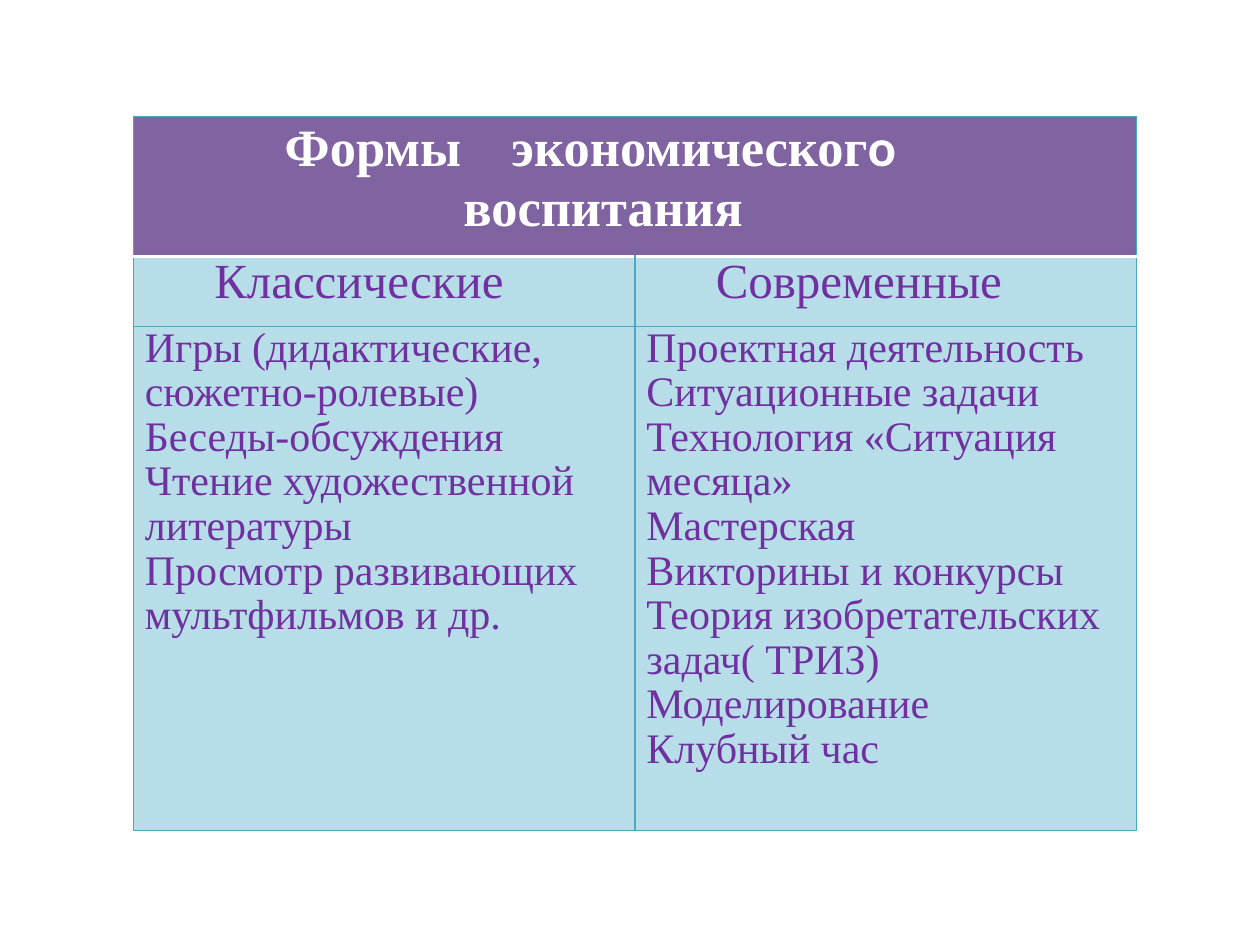
from lxml import etree
from pptx import Presentation
from pptx import util as u
from pptx.dml.color import RGBColor
from pptx.oxml.ns import qn

SERIF = "Times New Roman"
PURPLE, HEADER_FILL, BODY_FILL = "7030A0", "8064A2", "B7DEE8"
BORDER, WHITE = "46AAC5", "FFFFFF"

HEADINGS = ["Классические", "Современные"]
FORMS = [
    ["Игры (дидактические, сюжетно-ролевые)",
     "Беседы-обсуждения",
     "Чтение художественной литературы",
     "Просмотр\tразвивающих мультфильмов и др."],
    ["Проектная деятельность",
     "Ситуационные задачи",
     "Технология «Ситуация",
     "месяца»",
     "Мастерская",
     "Викторины и конкурсы",
     "Теория изобретательских",
     "задач( ТРИЗ)",
     "Моделирование",
     "Клубный час"],
]


def color(hex_string):
    return RGBColor.from_string(hex_string)


def style_paragraph(paragraph, size, hex_color, bold=False, left=0, first=0,
                    tab=None, spacing=None):
    font = paragraph.font
    font.name, font.size, font.bold = SERIF, u.Pt(size), bold
    font.color.rgb = color(hex_color)
    if spacing:
        paragraph.line_spacing = spacing
    # Indents and tab stop
    properties = paragraph._p.get_or_add_pPr()
    properties.set("marL", str(u.Cm(left)))
    properties.set("indent", str(u.Cm(first)))
    if tab:
        tab_list = etree.Element(qn("a:tabLst"))
        etree.SubElement(tab_list, qn("a:tab"), pos=str(u.Cm(tab)), algn="l")
        properties.find(qn("a:defRPr")).addprevious(tab_list)


def set_border(cell, side, hex_color, width):
    properties = cell._tc.get_or_add_tcPr()
    line = etree.Element(qn(f"a:ln{side}"), w=str(u.Pt(width)))
    fill = etree.SubElement(line, qn("a:solidFill"))
    etree.SubElement(fill, qn("a:srgbClr"), val=hex_color)
    # Border lines stand before the fill, in the order left, right, top, bottom
    properties.find(qn("a:solidFill")).addprevious(line)


def format_cell(cell, fill, top=(BORDER, 0.75), bottom=(BORDER, 0.75)):
    cell.margin_left = cell.margin_right = 0
    cell.margin_top = cell.margin_bottom = 0
    cell.fill.solid()
    cell.fill.fore_color.rgb = color(fill)
    edge = (BORDER, 0.75)
    for side, border in zip("LRTB", (edge, edge, top, bottom)):
        set_border(cell, side, *border)


def fill_cell(cell, lines, size, left, tab=None):
    frame = cell.text_frame
    for index, line in enumerate(lines):
        paragraph = frame.paragraphs[0] if index == 0 else frame.add_paragraph()
        paragraph.add_run().text = line
        style_paragraph(paragraph, size, PURPLE, left=left, spacing=0.96,
                        tab=tab if "\t" in line else None)


def fill_title(cell):
    first = cell.text_frame.paragraphs[0]
    first.add_run().text = "Формы\tэкономическог"
    ending = first.add_run()
    ending.text = "о"
    ending.font.name = "Calibri"
    style_paragraph(first, 30, WHITE, bold=True, first=3.05, tab=7.98)
    second = cell.text_frame.add_paragraph()
    second.add_run().text = "воспитания"
    style_paragraph(second, 30, WHITE, bold=True, left=6.65)


def add_forms_table(slide):
    frame = slide.shapes.add_table(3, 2, u.Cm(2.69), u.Cm(2.34),
                                   u.Cm(20.22), u.Cm(14.4))
    table = frame.table
    table.first_row = table.horz_banding = False
    # Plain table style, without borders or bands
    style_id = table._tbl.tblPr.find(qn("a:tableStyleId"))
    style_id.text = "{2D5ABB26-0587-4C30-8999-92F81FD0307C}"
    for row, height in zip(table.rows, (2.84, 1.4, 10.16)):
        row.height = u.Cm(height)

    # Title row across both columns
    divider = (WHITE, 2)
    title = table.cell(0, 0)
    title.merge(table.cell(0, 1))
    for column in range(2):
        format_cell(table.cell(0, column), HEADER_FILL, bottom=divider)
    fill_title(title)

    # Headings and lists
    for column, (heading, forms) in enumerate(zip(HEADINGS, FORMS)):
        heading_cell, list_cell = table.cell(1, column), table.cell(2, column)
        format_cell(heading_cell, BODY_FILL, top=divider)
        fill_cell(heading_cell, [heading], 28, left=1.63)
        format_cell(list_cell, BODY_FILL)
        fill_cell(list_cell, forms, 24, left=0.23, tab=4.72)
    # Keeps the last words of the left list on their own lines
    table.cell(2, 0).margin_right = u.Cm(0.9)


def main():
    presentation = Presentation()
    presentation.slide_width, presentation.slide_height = u.Cm(25.4), u.Cm(19.05)
    slide = presentation.slides.add_slide(presentation.slide_layouts[6])
    add_forms_table(slide)
    presentation.save("out.pptx")


if __name__ == "__main__":
    main()
